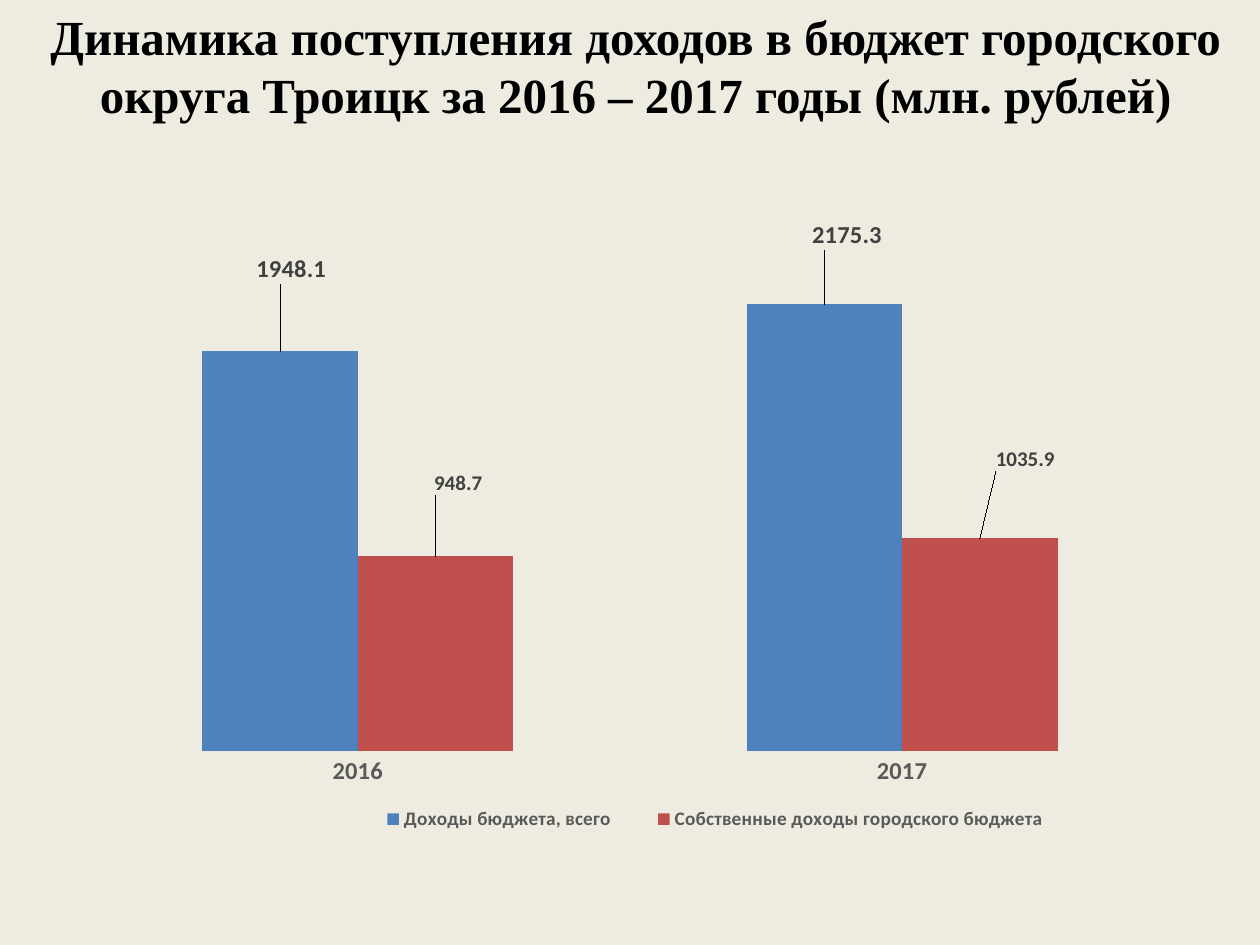
"""Build a slide with a clustered column chart of city budget revenue."""
from lxml.etree import SubElement
from pptx import Presentation
from pptx.chart.data import CategoryChartData
from pptx.dml.color import RGBColor
from pptx.enum.chart import XL_CHART_TYPE, XL_LABEL_POSITION, XL_LEGEND_POSITION, XL_TICK_MARK
from pptx.enum.text import MSO_ANCHOR, PP_ALIGN
from pptx.oxml.ns import qn
from pptx.util import Pt

PX = 914400 // 126
PAPER = RGBColor(0xEE, 0xEC, 0xE1)
BLACK = RGBColor(0, 0, 0)
GREY = RGBColor(0x59, 0x59, 0x59)
DARK = RGBColor(0x40, 0x40, 0x40)
BLUE = RGBColor(0x4F, 0x81, 0xBD)
RED = RGBColor(0xC0, 0x50, 0x4D)

TITLE = "Динамика поступления доходов в бюджет городского округа Троицк за 2016 – 2017 годы (млн. рублей)"
YEARS = ["2016", "2017"]
SERIES = [
    {"name": "Доходы бюджета, всего", "vals": [1948.1, 2175.3], "color": BLUE,
     "size": 14, "shifts": [(0.01, -0.1), (0.02, -0.08)]},
    {"name": "Собственные доходы городского бюджета", "vals": [948.7, 1035.9], "color": RED,
     "size": 12, "shifts": [(0.02, -0.09), (0.04, -0.1)]},
]
TITLE_BOX = (-2, -14, 1275, 158)
CHART_BOX = (63, 220, 1134, 624)
PLOT = {"layoutTarget": "inner", "xMode": "edge", "yMode": "edge",
        "x": 0.02, "y": 0.02, "w": 0.96, "h": 0.83}
LEGEND = {"xMode": "edge", "yMode": "edge", "x": 0.25, "y": 0.93, "w": 0.65, "h": 0.06}


def scale(box):
    return [n * PX for n in box]


def style(font, size, color, bold=True, name="Calibri"):
    font.size, font.bold, font.name = Pt(size), bold, name
    font.color.rgb = color


def place(item, after, values):
    for old in item.findall(qn("c:layout")):
        item.remove(old)
    layout = SubElement(item, qn("c:layout"))
    manual = SubElement(layout, qn("c:manualLayout"))
    for key, value in values.items():
        SubElement(manual, qn("c:" + key)).set("val", str(value))
    if after is None:
        item.insert(0, layout)
    else:
        item.find(qn(after)).addnext(layout)


def add_title(slide):
    title = slide.shapes.title
    title.left, title.top, title.width, title.height = scale(TITLE_BOX)
    frame = title.text_frame
    frame.text = TITLE
    frame.word_wrap = True
    frame.vertical_anchor = MSO_ANCHOR.MIDDLE
    para = frame.paragraphs[0]
    para.alignment = PP_ALIGN.CENTER
    style(para.runs[0].font, 28, BLACK, name="Times New Roman")


def add_bars(slide):
    data = CategoryChartData()
    data.categories = YEARS
    for row in SERIES:
        data.add_series(row["name"], row["vals"])
    chart = slide.shapes.add_chart(
        XL_CHART_TYPE.COLUMN_CLUSTERED, *scale(CHART_BOX), data).chart
    style(chart.font, 10, BLACK, bold=False)
    chart.has_title = False

    years = chart.category_axis
    years.major_tick_mark = years.minor_tick_mark = XL_TICK_MARK.NONE
    years.format.line.fill.background()
    style(years.tick_labels.font, 14, GREY)
    values = chart.value_axis
    values.visible = values.has_major_gridlines = False
    values.minimum_scale, values.maximum_scale = 0, 2500

    chart.has_legend = True
    legend = chart.legend
    legend.position = XL_LEGEND_POSITION.BOTTOM
    legend.include_in_layout = False
    style(legend.font, 11, GREY)
    place(legend._element, "c:legendPos", LEGEND)

    plot = chart.plots[0]
    plot.gap_width, plot.overlap = 150, 0
    plot.vary_by_categories = False
    place(chart._chartSpace.chart.plotArea, None, PLOT)
    for series, row in zip(plot.series, SERIES):
        series.format.fill.solid()
        series.format.fill.fore_color.rgb = row["color"]
        labels = series.data_labels
        labels.show_value = True
        labels.position = XL_LABEL_POSITION.OUTSIDE_END
        style(labels.font, row["size"], DARK)
        for i in range(len(YEARS)):
            label = series.points[i].data_label
            style(label.font, row["size"], DARK)
            label.position = XL_LABEL_POSITION.OUTSIDE_END
        for item, (x, y) in zip(series._element.iter(qn("c:dLbl")), row["shifts"]):
            place(item, "c:idx", {"x": x, "y": y})


def main():
    deck = Presentation()
    deck.slide_width, deck.slide_height = scale((1260, 945))
    slide = deck.slides.add_slide(deck.slide_layouts[5])
    slide.background.fill.solid()
    slide.background.fill.fore_color.rgb = PAPER
    add_title(slide)
    add_bars(slide)
    deck.save("out.pptx")


if __name__ == "__main__":
    main()
